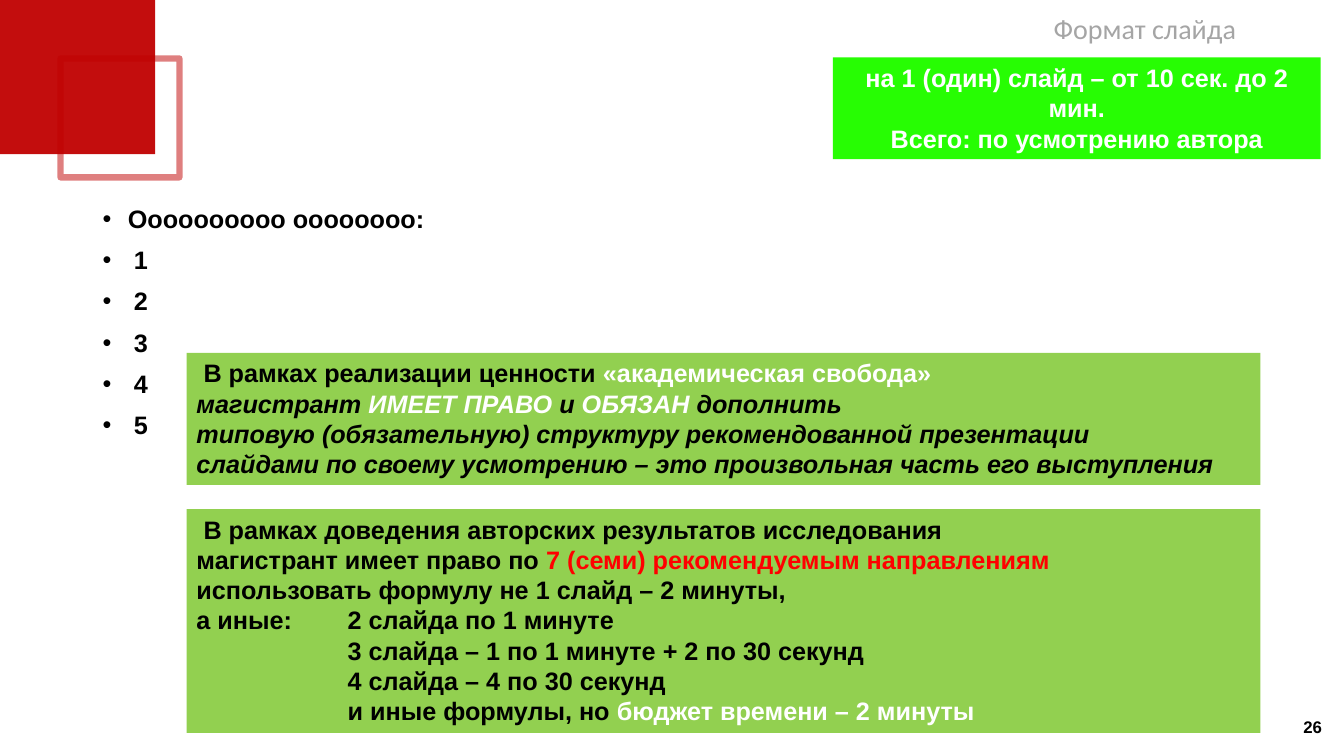
from dataclasses import dataclass

import lxml.etree
import pptx
import pptx.dml.color
import pptx.enum.shapes
import pptx.enum.text
import pptx.oxml.ns
import pptx.util

Inches = pptx.util.Inches
Pt = pptx.util.Pt
RGBColor = pptx.dml.color.RGBColor
Align = pptx.enum.text.PP_ALIGN
Anchor = pptx.enum.text.MSO_ANCHOR
qn = pptx.oxml.ns.qn

BLACK = RGBColor(0x00, 0x00, 0x00)
WHITE = RGBColor(0xFF, 0xFF, 0xFF)
RED = RGBColor(0xFF, 0x00, 0x00)
DARK_RED = RGBColor(0xC0, 0x00, 0x00)
GRAY = RGBColor(0xA5, 0xA5, 0xA5)
LIME = RGBColor(0x27, 0xFD, 0x03)
GREEN = RGBColor(0x92, 0xD0, 0x50)

FORMULA_INDENT = 1.5
LEAD_INDENT = 0.07


@dataclass
class Span:
    text: str
    color: RGBColor | None = None


@dataclass
class Para:
    spans: list[Span]
    color: RGBColor = BLACK
    size: float = 18
    font: str = "Arial"
    bold: bool = True
    italic: bool = False
    align: Align = Align.LEFT
    left: float = 0
    first: float = 0
    bullet: bool = False
    line_spacing: float = 1.0
    space_before: float = 0


@dataclass
class Block:
    left: float
    top: float
    width: float
    height: float
    paras: list[Para]
    fill: RGBColor | None = None
    anchor: Anchor = Anchor.TOP
    margins: tuple[float, float] = (0.1, 0.05)


def add_square(page, left: float, top: float, side: float):
    square = page.shapes.add_shape(
        pptx.enum.shapes.MSO_SHAPE.RECTANGLE,
        Inches(left), Inches(top), Inches(side), Inches(side))
    square.shadow.inherit = False
    return square


def set_opacity(shape, percent: int) -> None:
    color = next(shape._element.spPr.iter(qn("a:srgbClr")))
    lxml.etree.SubElement(color, qn("a:alpha")).set("val", str(percent * 1000))


def write_para(paragraph, para: Para) -> None:
    properties = paragraph._p.get_or_add_pPr()
    properties.set("marL", str(Inches(para.left)))
    properties.set("indent", str(Inches(para.first)))
    if para.bullet:
        lxml.etree.SubElement(properties, qn("a:buFont")).set("typeface", "Arial")
        lxml.etree.SubElement(properties, qn("a:buChar")).set("char", "•")
    paragraph.alignment = para.align
    paragraph.line_spacing = para.line_spacing
    paragraph.space_before = Pt(para.space_before)
    font = paragraph.font
    font.name, font.size = para.font, Pt(para.size)
    font.bold, font.italic = para.bold, para.italic
    font.color.rgb = para.color
    for span in para.spans:
        run = paragraph.add_run()
        run.text = span.text
        if span.color is not None:
            run.font.color.rgb = span.color


def add_block(page, block: Block) -> None:
    box = page.shapes.add_textbox(Inches(block.left), Inches(block.top),
                                  Inches(block.width), Inches(block.height))
    if block.fill is not None:
        box.fill.solid()
        box.fill.fore_color.rgb = block.fill
    frame = box.text_frame
    frame.word_wrap = True
    frame.vertical_anchor = block.anchor
    across, down = block.margins
    frame.margin_left = frame.margin_right = Inches(across)
    frame.margin_top = frame.margin_bottom = Inches(down)
    for index, para in enumerate(block.paras):
        paragraph = frame.add_paragraph() if index else frame.paragraphs[0]
        write_para(paragraph, para)


def bullet_para(text: str, indent: float, space_before: float) -> Para:
    return Para([Span(text)], left=indent, first=-indent, bullet=True,
                line_spacing=0.9, space_before=space_before)


OUTLINE = Block(0.92, 2, 11.5, 4.76, [
    bullet_para("Оооооооооо оооооооо:", 0.25, 0),
    *(bullet_para(str(number), 0.31, 10) for number in range(1, 6)),
])

FREEDOM = Block(1.85, 3.5, 10.65, 1.31, [
    Para([Span("В рамках реализации ценности "),
          Span("«академическая свобода»", WHITE)], first=LEAD_INDENT),
    Para([Span("магистрант "), Span("ИМЕЕТ ПРАВО ", WHITE), Span("и "),
          Span("ОБЯЗАН", WHITE), Span(" дополнить")], italic=True),
    Para([Span("типовую (обязательную) структуру рекомендованной презентации")],
         italic=True),
    Para([Span("слайдами по своему усмотрению – это произвольная часть "
               "его выступления")], italic=True),
], GREEN)

TIMING = Block(8.26, 0.57, 4.84, 1.01, [
    Para([Span(text)], WHITE, align=Align.CENTER)
    for text in ("на 1 (один) слайд – от 10 сек. до 2 мин.",
                 "Всего: по усмотрению автора")
], LIME)

FORMULAS = Block(1.85, 5.05, 10.65, 2.22, [
    Para([Span("В рамках доведения авторских результатов исследования")],
         first=LEAD_INDENT),
    Para([Span("магистрант имеет право по "),
          Span("7 (семи) рекомендуемым направлениям", RED)]),
    Para([Span("использовать формулу не 1 слайд – 2 минуты,")]),
    Para([Span("а иные:\t2 слайда по 1 минуте")],
         left=FORMULA_INDENT, first=-FORMULA_INDENT),
    Para([Span("3 слайда – 1 по 1 минуте + 2 по 30 секунд")], left=FORMULA_INDENT),
    Para([Span("4 слайда – 4 по 30 секунд")], left=FORMULA_INDENT),
    Para([Span("и иные формулы, но "), Span("бюджет времени – 2 минуты", WHITE)],
         left=FORMULA_INDENT),
], GREEN)

TITLE = Block(1.35, 0.15, 10.91, 0.39, [
    Para([Span("Формат слайда")], GRAY, 20, "Calibri", bold=False,
         align=Align.RIGHT, line_spacing=0.9),
], margins=(0, 0))

PAGE_NUMBER = Block(10.21, 7.01, 3, 0.4, [
    Para([Span("26")], size=12, align=Align.RIGHT),
], anchor=Anchor.MIDDLE)


def main() -> None:
    deck = pptx.Presentation()
    deck.slide_width, deck.slide_height = Inches(13.33), Inches(7.5)
    page = deck.slides.add_slide(deck.slide_layouts[6])

    outlined = add_square(page, 0.6, 0.58, 1.18)
    outlined.fill.background()
    outlined.line.color.rgb = DARK_RED
    outlined.line.width = Pt(4.5)
    set_opacity(outlined, 50)

    filled = add_square(page, 0, -0.01, 1.54)
    filled.fill.solid()
    filled.fill.fore_color.rgb = DARK_RED
    filled.line.fill.background()
    set_opacity(filled, 95)

    for block in (OUTLINE, FREEDOM, TIMING, FORMULAS, TITLE, PAGE_NUMBER):
        add_block(page, block)
    deck.save("out.pptx")


if __name__ == "__main__":
    main()
